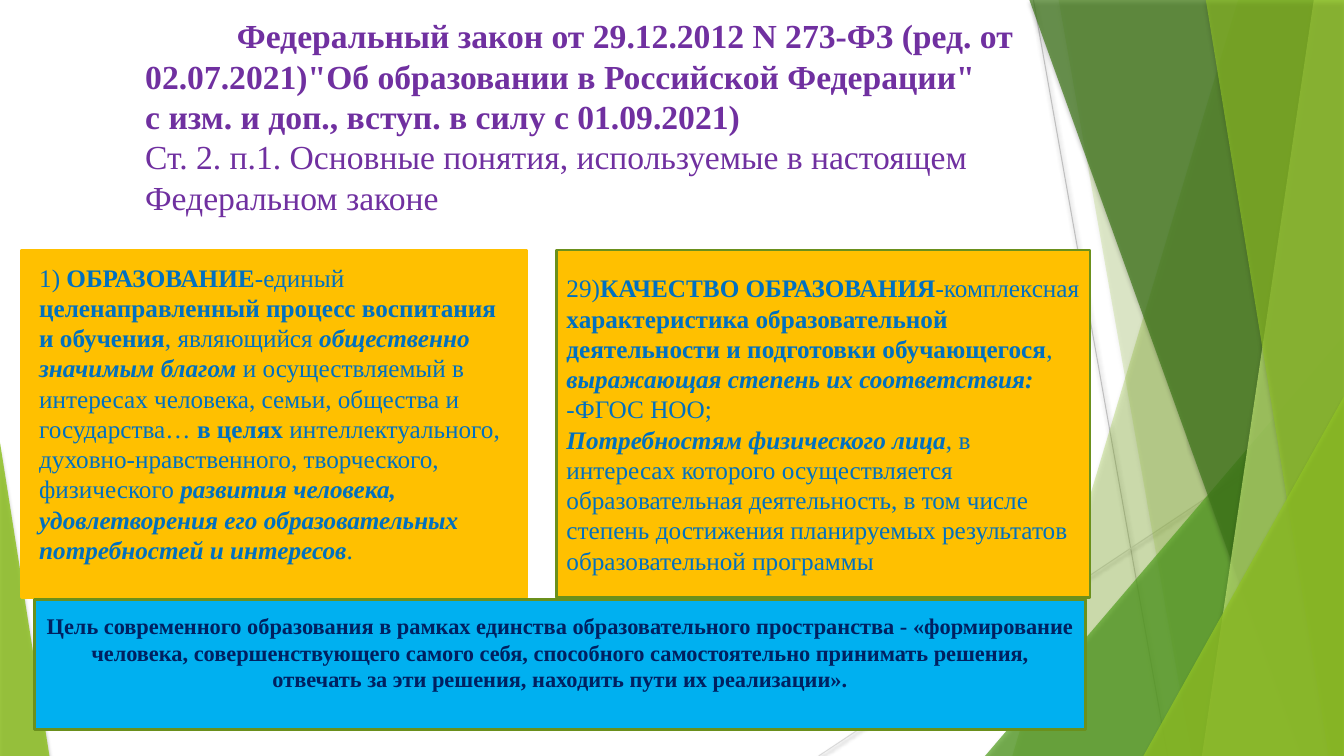
from lxml import etree
from pptx import Presentation
from pptx.dml.color import RGBColor
from pptx.enum.shapes import MSO_CONNECTOR as CONNECTOR, MSO_SHAPE as SHAPE
from pptx.enum.text import MSO_ANCHOR as ANCHOR, MSO_AUTO_SIZE as AUTO_SIZE, PP_ALIGN as ALIGN
from pptx.oxml.ns import qn
from pptx.util import Inches, Pt

WIDTH, HEIGHT = 13.33, 7.5
FONT = "Times New Roman"
GREEN = RGBColor(0x90, 0xC2, 0x26)
MID_GREEN = RGBColor(0x54, 0xA0, 0x21)
DARK_GREEN = RGBColor(0x3F, 0x78, 0x19)
PALE_GREEN = RGBColor(0xC0, 0xE4, 0x74)
OUTLINE = RGBColor(0x6B, 0x90, 0x1C)
GRAY = RGBColor(0xBF, 0xBF, 0xBF)
LIGHT_GRAY = RGBColor(0xD9, 0xD9, 0xD9)
AMBER = RGBColor(0xFF, 0xC0, 0x00)
SKY = RGBColor(0x00, 0xB0, 0xF0)
PURPLE = RGBColor(0x70, 0x30, 0xA0)
BLUE = RGBColor(0x00, 0x70, 0xC0)
NAVY = RGBColor(0x00, 0x20, 0x60)

# Run styles: (bold, italic)
PLAIN, BOLD, BOLD_ITALIC = (False, False), (True, False), (True, True)

TITLE = [[
    ("Федеральный закон от 29.12.2012 N 273-ФЗ (ред. от 02.07.2021)\"Об образовании "
     "в Российской Федерации\"\nс изм. и доп., вступ. в силу с 01.09.2021)\n", BOLD),
    ("Ст. 2. п.1. Основные понятия, используемые в настоящем Федеральном законе", PLAIN),
]]
EDUCATION = [[
    ("1) ", PLAIN), ("ОБРАЗОВАНИЕ", BOLD), ("-единый ", PLAIN),
    ("целенаправленный процесс воспитания и обучения", BOLD),
    (", являющийся ", PLAIN), ("общественно значимым благом ", BOLD_ITALIC),
    ("и осуществляемый в интересах человека, семьи, общества и государства… ", PLAIN),
    ("в целях ", BOLD),
    ("интеллектуального, духовно-нравственного, творческого, физического ", PLAIN),
    ("развития человека, удовлетворения его образовательных потребностей и интересов",
     BOLD_ITALIC),
    (".", PLAIN),
]]
QUALITY = [
    [("29)", PLAIN), ("КАЧЕСТВО ОБРАЗОВАНИЯ", BOLD), ("-комплексная ", PLAIN),
     ("характеристика образовательной деятельности и подготовки обучающегося", BOLD),
     (", ", PLAIN), ("выражающая степень их соответствия:", BOLD_ITALIC)],
    [("-ФГОС НОО;", PLAIN)],
    [("Потребностям физического лица", BOLD_ITALIC),
     (", в интересах которого осуществляется образовательная деятельность, в том числе "
      "степень достижения планируемых результатов образовательной программы", PLAIN)],
]
GOAL = [[
    ("Цель современного образования в рамках единства образовательного пространства - "
     "«формирование человека, совершенствующего самого себя, способного самостоятельно "
     "принимать решения, отвечать за эти решения, находить пути их реализации».", BOLD),
]]


def add_shadow(shape, opacity, blur, distance):
    """Add a soft black shadow that falls straight down."""
    effects = etree.SubElement(shape._element.spPr, qn("a:effectLst"))
    shadow = etree.SubElement(effects, qn("a:outerShdw"), blurRad=str(Pt(blur)),
                              dist=str(Pt(distance)), dir="5400000", rotWithShape="0")
    color = etree.SubElement(shadow, qn("a:srgbClr"), val="000000")
    etree.SubElement(color, qn("a:alpha"), val=str(opacity * 1000))


def style_facet(shape, color, opacity):
    shape.fill.solid()
    shape.fill.fore_color.rgb = color
    shape.line.fill.background()
    rgb = shape._element.spPr.find(qn("a:solidFill")).find(qn("a:srgbClr"))
    etree.SubElement(rgb, qn("a:alpha"), val=str(opacity * 1000))
    add_shadow(shape, 35, 3, 2)


def add_shard(slide, top_x, bottom_x, color, opacity):
    """Fill the area from a slanted edge to the right side of the slide."""
    corners = [(WIDTH, 0), (WIDTH, HEIGHT), (bottom_x, HEIGHT)]
    builder = slide.shapes.build_freeform(Inches(top_x), 0)
    builder.add_line_segments([(Inches(x), Inches(y)) for x, y in corners], close=True)
    style_facet(builder.convert_to_shape(), color, opacity)


def add_corner(slide, left, top, width, apex, color, opacity):
    """Add a right triangle standing on the bottom edge; apex is 0 (left) or 1 (right)."""
    triangle = slide.shapes.add_shape(SHAPE.ISOSCELES_TRIANGLE, Inches(left), Inches(top),
                                      Inches(width), Inches(HEIGHT - top))
    triangle.adjustments[0] = apex
    style_facet(triangle, color, opacity)


def add_backdrop(slide):
    for start, end, color in [((10.25, 0), (11.58, HEIGHT), GRAY),
                              ((WIDTH, 4.03), (8.12, HEIGHT), LIGHT_GRAY)]:
        line = slide.shapes.add_connector(CONNECTOR.STRAIGHT,
                                          *(Inches(value) for value in start + end))
        line.line.color.rgb = color
        line.line.width = Pt(0.75)
        add_shadow(line, 38, 3.1, 1.6)
    add_shard(slide, 12.28, 10.04, GREEN, 30)
    add_shard(slide, 10.5, 11.82, GREEN, 20)
    add_corner(slide, 9.77, 3.33, 3.56, 1, MID_GREEN, 72)
    add_shard(slide, 10.21, 12.91, DARK_GREEN, 70)
    add_shard(slide, 13.03, 11.92, PALE_GREEN, 70)
    add_shard(slide, 11.96, 13.18, GREEN, 65)
    add_corner(slide, 11.34, 3.93, 1.99, 1, GREEN, 80)
    add_corner(slide, 0, 4.39, 0.49, 0, GREEN, 85)


def write_text(shape, paragraphs, size, color, align=ALIGN.LEFT, anchor=ANCHOR.TOP):
    """Fill a shape with paragraphs of (text, style) runs; a newline breaks the line."""
    frame = shape.text_frame
    frame.word_wrap = True
    frame.auto_size = AUTO_SIZE.NONE
    frame.vertical_anchor = anchor
    for index, runs in enumerate(paragraphs):
        paragraph = frame.add_paragraph() if index else frame.paragraphs[0]
        paragraph.alignment = align
        font = paragraph.font
        font.name, font.size, font.color.rgb = FONT, Pt(size), color
        for text, (bold, italic) in runs:
            for number, part in enumerate(text.split("\n")):
                if number:
                    paragraph.add_line_break()
                if part:
                    run = paragraph.add_run()
                    run.text = part
                    run.font.bold, run.font.italic = bold, italic


def add_panel(slide, box, fill, outline):
    panel = slide.shapes.add_shape(SHAPE.RECTANGLE, *(Inches(value) for value in box))
    panel.shadow.inherit = False
    panel.fill.solid()
    panel.fill.fore_color.rgb = fill
    panel.line.color.rgb = outline
    panel.line.width = Pt(2)
    return panel


def add_title(slide, box):
    title = slide.shapes.title
    title.left, title.top, title.width, title.height = (Inches(value) for value in box)
    write_text(title, TITLE, 24, PURPLE)
    properties = title.text_frame.paragraphs[0]._p.get_or_add_pPr()
    properties.set("marL", "0")
    properties.set("indent", str(Inches(0.91)))


def add_education(slide, box):
    add_panel(slide, box, AMBER, AMBER)
    left, top, width, height = box
    text_box = slide.shapes.add_textbox(Inches(left + 0.08), Inches(top + 0.07),
                                        Inches(width - 0.23), Inches(height - 0.35))
    write_text(text_box, EDUCATION, 18, BLUE)


def add_quality(slide, box):
    panel = add_panel(slide, box, AMBER, OUTLINE)
    write_text(panel, QUALITY, 18, BLUE, anchor=ANCHOR.MIDDLE)


def add_goal(slide, box):
    panel = add_panel(slide, box, SKY, OUTLINE)
    panel.text_frame.margin_top = Inches(0.12)
    write_text(panel, GOAL, 16, NAVY, align=ALIGN.CENTER)


def main():
    presentation = Presentation()
    presentation.slide_width, presentation.slide_height = Inches(WIDTH), Inches(HEIGHT)
    slide = presentation.slides.add_slide(presentation.slide_layouts.get_by_name("Title Only"))
    add_backdrop(slide)
    add_title(slide, (1.34, 0.1, 9.45, 2.1))
    add_education(slide, (0.21, 2.48, 5.01, 3.45))
    add_quality(slide, (5.52, 2.48, 5.29, 3.45))
    add_goal(slide, (0.34, 5.95, 10.43, 1.29))
    presentation.save("out.pptx")


if __name__ == "__main__":
    main()
